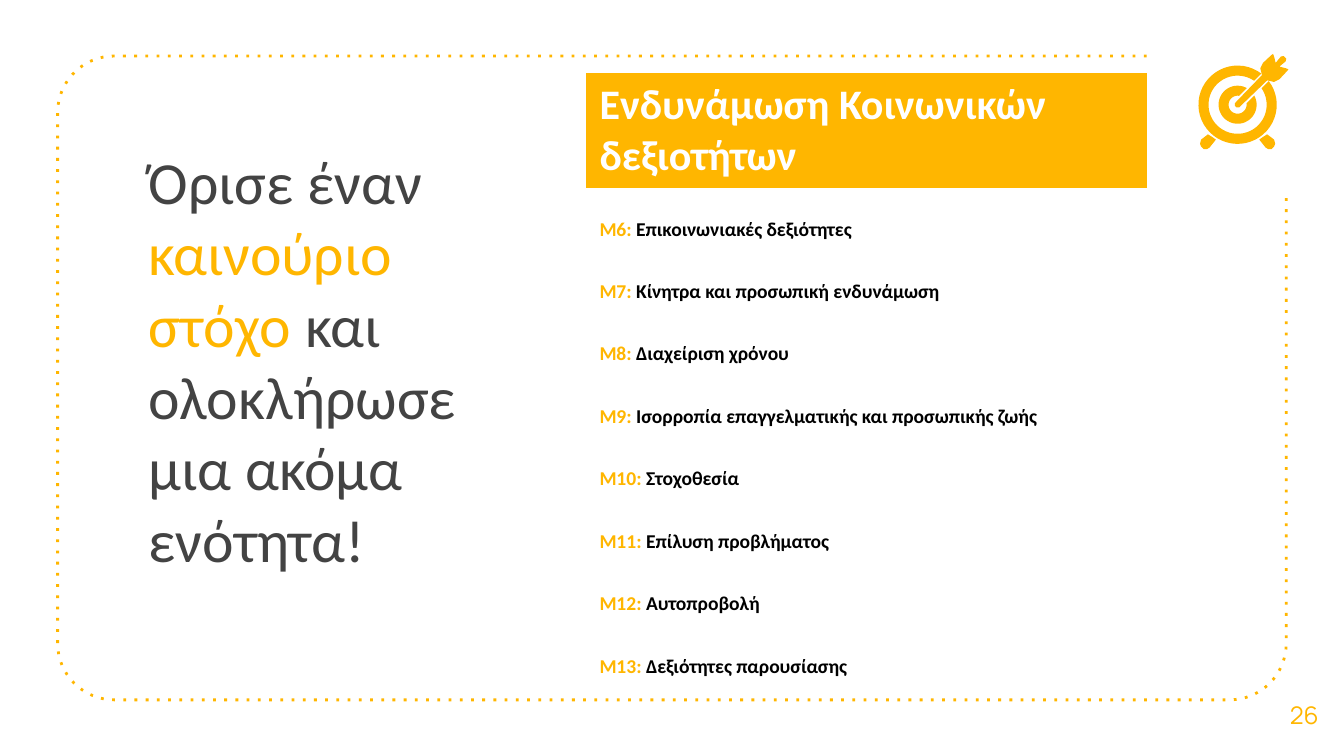
from math import asin, cos, degrees, radians, sin

from pptx import Presentation
from pptx.dml.color import RGBColor
from pptx.enum.dml import MSO_LINE
from pptx.enum.text import MSO_ANCHOR as ANCHOR, PP_ALIGN as ALIGN
from pptx.oxml.ns import qn
from pptx.util import Cm, Pt

COLORS = {"accent": "FFB600", "text": "434343", "white": "FFFFFF", "black": "000000"}
FONT = "Calibri"
TITLE = [("Όρισε έναν ", "text"), ("καινούριο στόχο ", "accent"),
         ("και ολοκλήρωσε μια ακόμα ενότητα!", "text")]
HEADER = "Ενδυνάμωση Κοινωνικών δεξιοτήτων"
FIRST_MODULE = 6
MODULES = ["Επικοινωνιακές δεξιότητες", "Κίνητρα και προσωπική ενδυνάμωση",
           "Διαχείριση χρόνου", "Ισορροπία επαγγελματικής και προσωπικής ζωής",
           "Στοχοθεσία", "Επίλυση προβλήματος", "Αυτοπροβολή", "Δεξιότητες παρουσίασης"]


def rgb(name):
    return RGBColor.from_string(COLORS[name])


def write(p, runs, size, font=FONT, bold=False):
    """Fill a paragraph with (text, colour name) runs."""
    p.font.size, p.font.name, p.font.bold = Pt(size), font, bold
    for text, color in runs:
        r = p.add_run()
        r.text = text
        r.font.color.rgb = rgb(color)


def add_text(slide, box, runs, size, font=FONT, align=ALIGN.LEFT, anchor=ANCHOR.TOP):
    tf = slide.shapes.add_textbox(*map(Cm, box)).text_frame
    tf.word_wrap = True
    tf.vertical_anchor = anchor
    tf.margin_left = tf.margin_right = tf.margin_top = tf.margin_bottom = Cm(0.25)
    p = tf.paragraphs[0]
    p.alignment = align
    write(p, runs, size, font)


def arc(cx, cy, radius, start, end, steps):
    """Points on a circle; degrees run counter-clockwise from the right."""
    angles = [radians(start + (end - start) * i / steps) for i in range(steps + 1)]
    return [(cx + radius * cos(a), cy - radius * sin(a)) for a in angles]


def add_outline(slide, points, close=True):
    points = [(Cm(x), Cm(y)) for x, y in points]
    builder = slide.shapes.build_freeform(*points[0])
    builder.add_line_segments(points[1:], close=close)
    sp = builder.convert_to_shape()
    sp.shadow.inherit = False
    return sp


def add_frame(slide, box, radius, top_end, right_end):
    """Dotted rounded frame, open at its top right corner."""
    left, top, width, height = box
    right, bottom = left + width, top + height
    points = [(top_end, top)]
    for cx, cy, start in ((left + radius, top + radius, 90),
                          (left + radius, bottom - radius, 180),
                          (right - radius, bottom - radius, 270)):
        points += arc(cx, cy, radius, start, start + 90, 16)
    sp = add_outline(slide, points + [(right, right_end)], close=False)
    sp.fill.background()
    sp.line.color.rgb = rgb("accent")
    sp.line.width = Pt(1.5)
    sp.line.dash_style = MSO_LINE.ROUND_DOT
    next(sp._element.iter(qn("a:prstDash"))).set("val", "dot")


def ring(outer, inner, slit=0.1):
    """Ring around the origin, cut by a slit towards the upper right."""
    points = []
    for radius, forward in ((outer, True), (inner, False)):
        gap = degrees(asin(slit / radius))
        ends = (45 + gap, 405 - gap)
        points += arc(0, 0, radius, *(ends if forward else ends[::-1]), 48)
    return points


def add_target(slide, box):
    """Target with an arrow from the upper right."""
    left, top, width, height = box
    unit_x, unit_y = width / 1.66, height / 1.8
    cx, cy = left + 0.74 * unit_x, top + 0.96 * unit_y
    foot = [(-0.56, 0.56), (-0.69, 0.66), (-0.71, 0.74), (-0.69, 0.79), (-0.64, 0.84),
            (-0.58, 0.84), (-0.53, 0.81), (-0.41, 0.66), (-0.48, 0.61)]
    half_arrow = [(-0.05, 0.02), (-0.05, -0.03), (0.46, -0.56), (0.43, -0.69),
                  (0.48, -0.79), (0.64, -0.94), (0.67, -0.96), (0.69, -0.91),
                  (0.72, -0.79), (0.82, -0.91), (0.87, -0.92)]
    arrow = half_arrow + [(-y, -x) for x, y in reversed(half_arrow)]
    parts = []
    for points in (ring(0.74, 0.55), ring(0.36, 0.17), foot,
                   [(-x, y) for x, y in foot], arrow):
        sp = add_outline(slide, [(cx + x * unit_x, cy + y * unit_y) for x, y in points])
        sp.fill.solid()
        sp.fill.fore_color.rgb = rgb("accent")
        sp.line.fill.background()
        parts.append(sp)
    slide.shapes.add_group_shape(parts)


def add_modules(slide, box, header_height):
    left, top, width, height = box
    table = slide.shapes.add_table(len(MODULES) + 1, 1, *map(Cm, box)).table
    table.first_row = table.horz_banding = False
    row_height = (height - header_height) / len(MODULES)
    for i, row in enumerate(table.rows):
        row.height = Cm(row_height if i else header_height)
        row.cells[0].margin_left = Cm(0.27)
    header = table.cell(0, 0)
    header.fill.solid()
    header.fill.fore_color.rgb = rgb("accent")
    write(header.text_frame.paragraphs[0], [(HEADER, "white")], 22.5, bold=True)
    for i, name in enumerate(MODULES):
        cell = table.cell(i + 1, 0)
        cell.fill.background()
        cell.vertical_anchor = ANCHOR.BOTTOM
        cell.margin_bottom = Cm(0.19)
        runs = [(f"M{FIRST_MODULE + i}: ", "accent"), (name, "black")]
        write(cell.text_frame.paragraphs[0], runs, 10.5, bold=True)


def main():
    prs = Presentation()
    prs.slide_width, prs.slide_height = Cm(25.4), Cm(14.29)
    slide = prs.slides.add_slide(prs.slide_layouts[6])
    add_frame(slide, (1.09, 1.06, 23.22, 12.17), 1.07, top_end=21.67, right_end=3.71)
    add_text(slide, (2.56, 2.48, 7.54, 2.39), TITLE, 32)
    add_text(slide, (23.9, 12.76, 1.5, 1.52), [("26", "accent")], 13, "Manrope",
             ALIGN.CENTER, ANCHOR.MIDDLE)
    add_target(slide, (22.65, 1.02, 1.66, 1.8))
    add_modules(slide, (11.06, 1.37, 10.64, 11.64), 2.2)
    prs.save("out.pptx")


if __name__ == "__main__":
    main()
